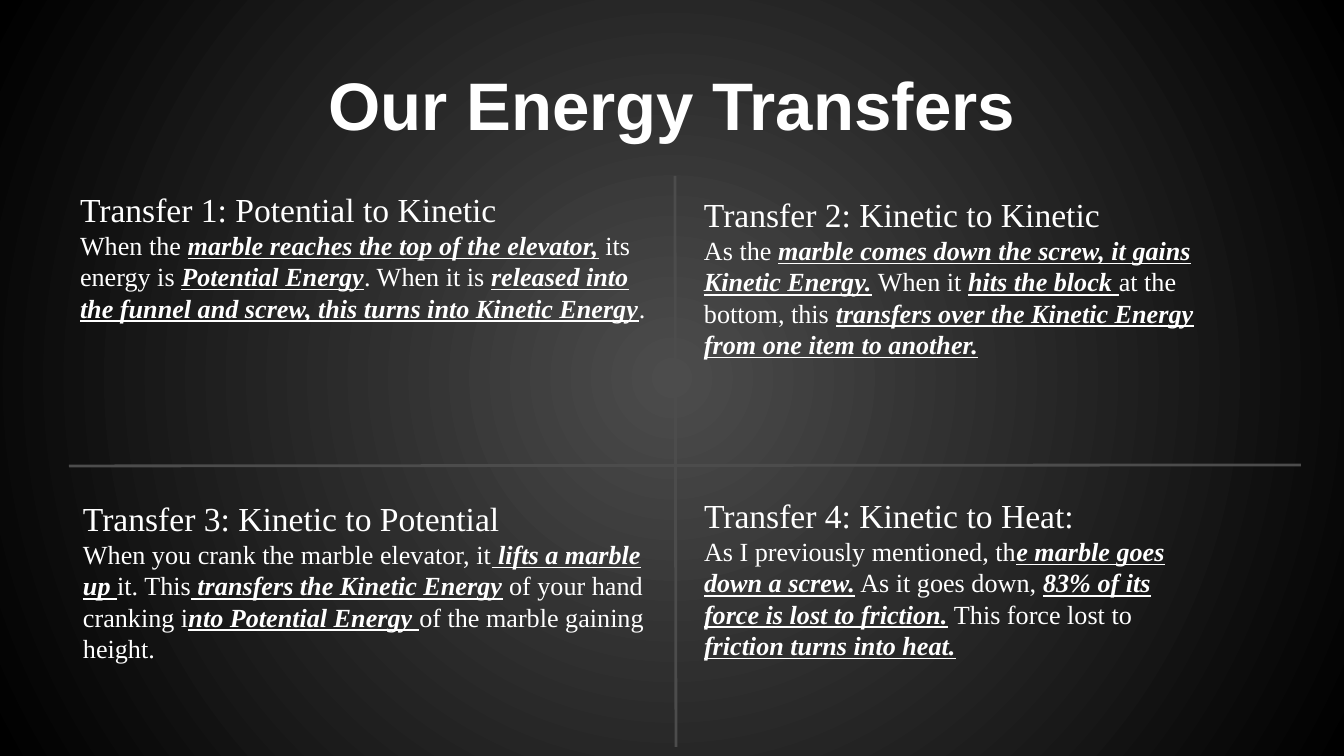
import pptx
import pptx.dml.color
import pptx.enum.shapes
import pptx.enum.text
import pptx.oxml.ns
import pptx.util
from lxml import etree

PX = 914400 / 134.4
INSET = 13
WHITE = "FFFFFF"
GREY = "4C4C4C"
BLACK = "000000"

# Left, top, width, height, heading, body; asterisks enclose emphasised words
TRANSFERS = [
    (67, 176, 593, 278, "Transfer 1: Potential to Kinetic",
     "When the *marble reaches the top of the elevator,* its energy is "
     "*Potential Energy*. When it is *released into the funnel and screw, "
     "this turns into Kinetic Energy*."),
    (691, 181, 538, 270, "Transfer 2: Kinetic to Kinetic",
     "As the *marble comes down the screw, it gains Kinetic Energy.* When it "
     "*hits the block *at the bottom, this *transfers over the Kinetic Energy "
     "from one item to another.*"),
    (70, 485, 590, 250, "Transfer 3: Kinetic to Potential",
     "When you crank the marble elevator, it* lifts a marble up *it. This"
     "* transfers the Kinetic Energy* of your hand cranking i"
     "*nto Potential Energy *of the marble gaining height."),
    (691, 482, 526, 250, "Transfer 4: Kinetic to Heat:",
     "As I previously mentioned, th*e marble goes down a screw.* As it goes "
     "down, *83% of its force is lost to friction.* This force lost to "
     "*friction turns into heat.*"),
]

# Start and end points of the lines between the quadrants
DIVIDERS = [(675, 176, 676, 747), (69, 466, 1301, 465)]


def px(length):
    return pptx.util.Emu(round(length * PX))


def color(value):
    return pptx.dml.color.RGBColor.from_string(value)


def set_background(slide):
    fill = slide.background.fill
    fill.gradient()
    for stop, value in zip(fill.gradient_stops, (GREY, BLACK)):
        stop.color.rgb = color(value)
    # Turn the linear gradient into a circular one around the centre
    qn = pptx.oxml.ns.qn
    gradient = slide.element.find(".//" + qn("a:gradFill"))
    gradient.remove(gradient.find(qn("a:lin")))
    circle = etree.SubElement(gradient, qn("a:path"), path="circle")
    etree.SubElement(circle, qn("a:fillToRect"),
                     l="50000", t="50000", r="50000", b="50000")


def set_frame(shape, anchor):
    frame = shape.text_frame
    frame.word_wrap = True
    frame.auto_size = pptx.enum.text.MSO_AUTO_SIZE.NONE
    frame.vertical_anchor = anchor
    frame.margin_left = frame.margin_right = px(INSET)
    frame.margin_top = frame.margin_bottom = px(INSET)
    return frame


def set_font(paragraph, name, size):
    paragraph.font.name = name
    paragraph.font.size = pptx.util.Pt(size)
    paragraph.font.color.rgb = color(WHITE)


def add_title(slide, text):
    title = slide.shapes.title
    title.left, title.top, title.width, title.height = map(px, (67, 31, 1210, 126))
    frame = set_frame(title, pptx.enum.text.MSO_ANCHOR.BOTTOM)
    frame.text = text
    paragraph = frame.paragraphs[0]
    paragraph.alignment = pptx.enum.text.PP_ALIGN.CENTER
    set_font(paragraph, "Arial", 36)
    paragraph.font.bold = True


def add_divider(slide, points):
    line = slide.shapes.add_connector(
        pptx.enum.shapes.MSO_CONNECTOR.STRAIGHT, *map(px, points))
    line.line.color.rgb = color(GREY)
    line.line.width = pptx.util.Pt(1.5)
    etree.SubElement(line.element.spPr, pptx.oxml.ns.qn("a:effectLst"))


def add_transfer(slide, left, top, width, height, heading, body):
    box = slide.shapes.add_textbox(*map(px, (left, top, width, height)))
    frame = set_frame(box, pptx.enum.text.MSO_ANCHOR.TOP)
    first = frame.paragraphs[0]
    first.text = heading
    set_font(first, "Times New Roman", 18)
    second = frame.add_paragraph()
    set_font(second, "Times New Roman", 14)
    for index, text in enumerate(body.split("*")):
        if not text:
            continue
        run = second.add_run()
        run.text = text
        if index % 2:
            run.font.bold = run.font.italic = run.font.underline = True


def main():
    presentation = pptx.Presentation()
    presentation.slide_width, presentation.slide_height = px(1344), px(756)
    slide = presentation.slides.add_slide(presentation.slide_layouts[5])
    set_background(slide)
    add_title(slide, "Our Energy Transfers")
    for points in DIVIDERS:
        add_divider(slide, points)
    for transfer in TRANSFERS:
        add_transfer(slide, *transfer)
    presentation.save("out.pptx")


if __name__ == "__main__":
    main()
